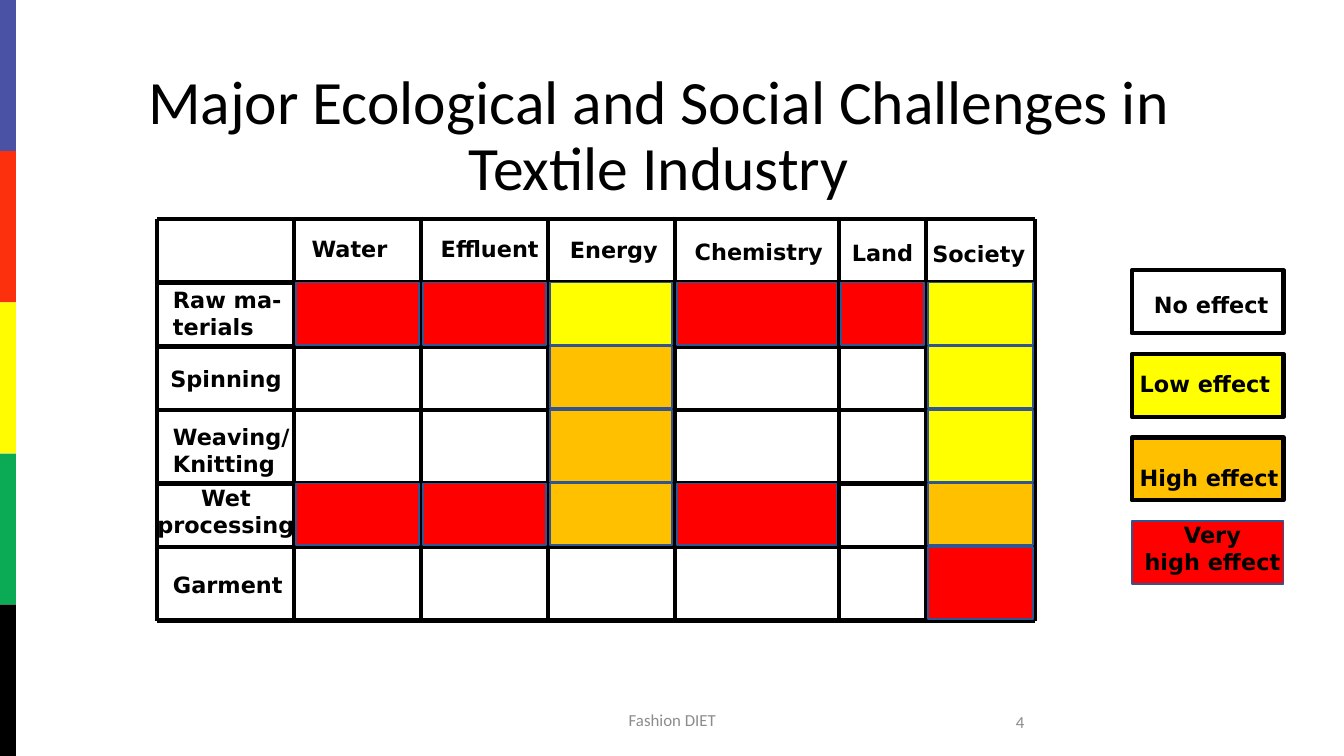
from lxml.etree import SubElement
from pptx import Presentation
from pptx.dml.color import RGBColor
from pptx.enum.shapes import MSO_CONNECTOR as LINE, MSO_SHAPE as SHAPE
from pptx.enum.text import MSO_ANCHOR as ANCHOR, MSO_AUTO_SIZE as FIT, PP_ALIGN as ALIGN
from pptx.oxml.ns import qn
from pptx.util import Cm, Pt

rgb = RGBColor.from_string
LEFT, CENTER, RIGHT = ALIGN.LEFT, ALIGN.CENTER, ALIGN.RIGHT
BLACK, GRAY, BLUE = "000000", "8C8C8C", "325491"
LOW, HIGH, VERY_HIGH = "FFFF00", "FFC000", "FF0000"

deck = Presentation()
deck.slide_width, deck.slide_height = Cm(25.4), Cm(14.29)
slide = deck.slides.add_slide(deck.slide_layouts[6])


def add_box(left, top, width, height, fill, edge=None, weight=1):
    box = slide.shapes.add_shape(SHAPE.RECTANGLE, Cm(left), Cm(top), Cm(width), Cm(height))
    box.shadow.inherit = False
    if fill:
        box.fill.solid()
        box.fill.fore_color.rgb = rgb(fill)
    else:
        box.fill.background()
    if edge:
        box.line.color.rgb = rgb(edge)
        box.line.width = Pt(weight)
    else:
        box.line.fill.background()


def add_text(left, top, width, height, text, color, font_format, frame_format, paragraph_format):
    frame = slide.shapes.add_textbox(Cm(left), Cm(top), Cm(width), Cm(height)).text_frame
    frame.text = text
    for key, value in frame_format.items():
        setattr(frame, key, value)
    for paragraph in frame.paragraphs:
        for key, value in paragraph_format.items():
            setattr(paragraph, key, value)
        for key, value in font_format.items():
            setattr(paragraph.font, key, value)
        paragraph.font.color.rgb = rgb(color)


label_font = {"name": "DejaVu Sans", "size": Pt(12), "bold": True}
label_frame = {"word_wrap": False, "auto_size": FIT.SHAPE_TO_FIT_TEXT}
footer_font = {"name": "Calibri", "size": Pt(9)}
title_font = {"name": "Calibri", "size": Pt(33)}
middle_frame = {"word_wrap": True, "auto_size": FIT.NONE, "vertical_anchor": ANCHOR.MIDDLE}

stripe_height = 14.29 / 5
for index, stripe in enumerate(["4952A4", "FC300D", "FFFB00", "0BAA54", BLACK]):
    add_box(0, index * stripe_height, 0.3, stripe_height, stripe)

add_text(8.41, 13.23, 8.59, 0.76, "Fashion DIET", GRAY, footer_font, middle_frame, {"alignment": CENTER})
add_text(13.89, 13.26, 5.72, 0.76, "4", GRAY, footer_font, middle_frame, {"alignment": RIGHT})

columns = [2.97, 5.56, 7.96, 10.36, 12.75, 15.85, 17.5, 19.56]
rows = [4.14, 5.34, 6.55, 7.75, 9.14, 10.34, 11.73]
grid = [(x, rows[0], x, rows[-1]) for x in columns]
grid += [(columns[0], y, columns[-1], y) for y in rows]
for ends in grid:
    rule = slide.shapes.add_connector(LINE.STRAIGHT, *map(Cm, ends))
    rule.line.color.rgb = rgb(BLACK)
    rule.line.width = Pt(2.25)
    SubElement(rule.element.spPr, qn("a:effectLst"))

labels = [
    (5.64, 4.32, 1.98, 0.76, "Water", LEFT),
    (8.08, 4.32, 2.41, 0.76, "Effluent", LEFT),
    (10.52, 4.34, 2.18, 0.76, "Energy", LEFT),
    (12.88, 4.37, 2.95, 0.76, "Chemistry", LEFT),
    (15.85, 4.39, 1.68, 0.76, "Land", LEFT),
    (17.37, 4.42, 2.26, 0.76, "Society", LEFT),
    (3.02, 5.28, 2.64, 1.27, "Raw ma-\nterials", LEFT),
    (2.97, 6.78, 2.62, 0.76, "Spinning", LEFT),
    (3.02, 7.87, 2.87, 1.27, "Weaving/\nKnitting", LEFT),
    (2.72, 9.02, 3.1, 1.27, "Wet\nprocessing", CENTER),
    (3.02, 10.67, 2.59, 0.76, "Garment", LEFT),
]

effects = [
    [VERY_HIGH, VERY_HIGH, LOW, VERY_HIGH, VERY_HIGH, LOW],
    [None, None, HIGH, None, None, LOW],
    [None, None, HIGH, None, None, LOW],
    [VERY_HIGH, VERY_HIGH, HIGH, VERY_HIGH, None, HIGH],
    [None, None, None, None, None, VERY_HIGH],
]
for row, row_effects in enumerate(effects, 1):
    for column, effect in enumerate(row_effects, 1):
        if effect:
            left, top = columns[column], rows[row]
            width, height = columns[column + 1] - left, rows[row + 1] - top
            add_box(left + 0.04, top, width - 0.08, height - 0.03, effect, BLUE)

legend = [(None, BLACK, 2.25), (LOW, BLACK, 2.25), (HIGH, BLACK, 2.25), (VERY_HIGH, BLUE, 1)]
for index, (effect, edge, weight) in enumerate(legend):
    add_box(21.39, 5.11 + index * 1.58, 2.87, 1.19, effect, edge, weight)

labels += [
    (21.56, 5.38, 2.69, 0.76, "No effect", LEFT),
    (21.29, 6.88, 3.02, 0.76, "Low effect", LEFT),
    (21.29, 8.64, 3.15, 0.76, "High effect", LEFT),
    (21.34, 9.73, 3.15, 1.27, "Very\nhigh effect", CENTER),
]
for *place, label, align in labels:
    add_text(*place, label, BLACK, label_font, label_frame, {"alignment": align})

add_text(1.5, 1.9, 21.9, 1.4, "Major Ecological and Social Challenges in Textile Industry",
         BLACK, title_font, middle_frame, {"alignment": CENTER, "line_spacing": 0.9})

deck.save("out.pptx")
